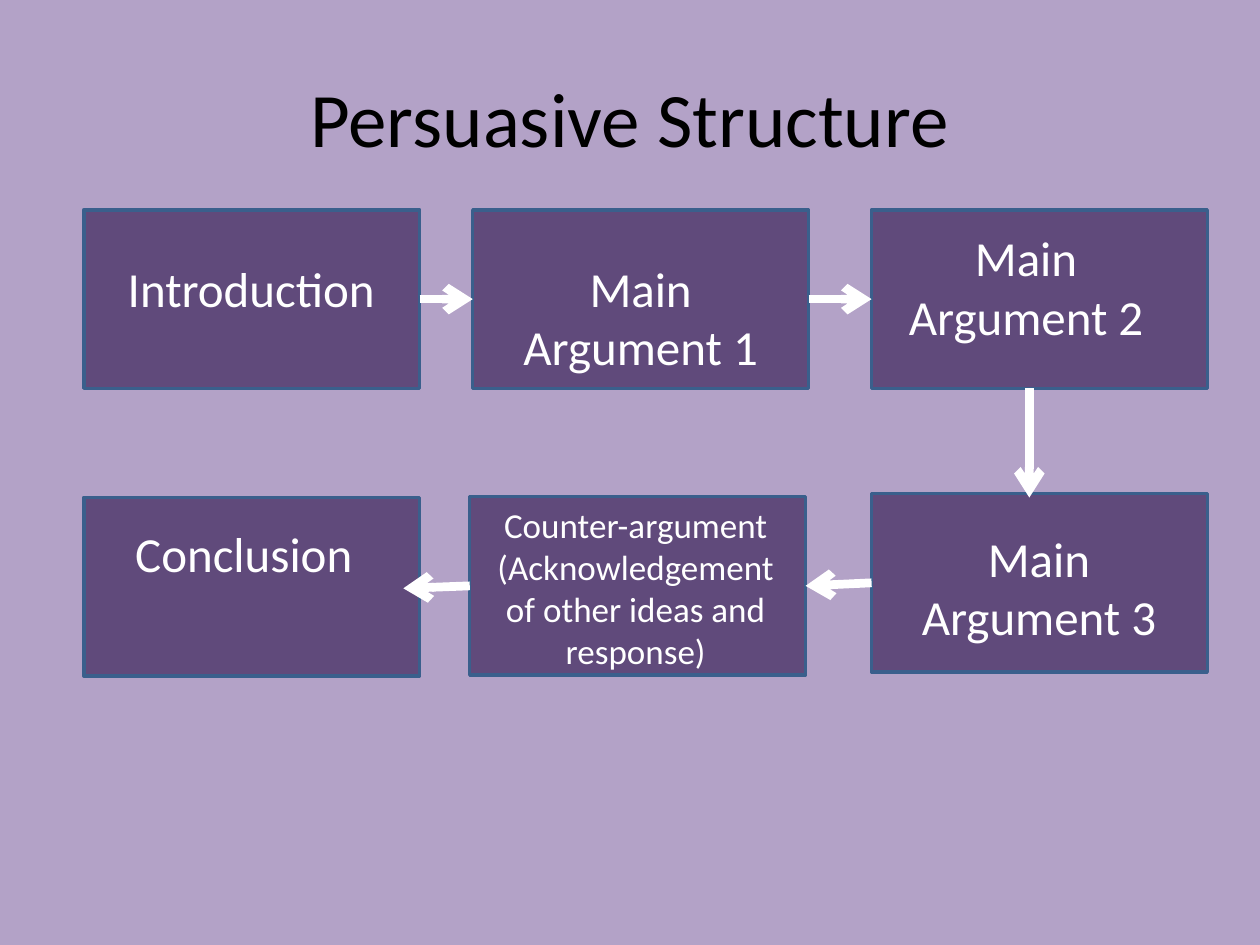
from lxml import etree
from pptx import Presentation
from pptx.dml.color import RGBColor
from pptx.enum.shapes import MSO_CONNECTOR, MSO_SHAPE
from pptx.enum.text import MSO_ANCHOR, MSO_AUTO_SIZE, PP_ALIGN
from pptx.oxml.ns import qn
from pptx.util import Cm, Pt

LAVENDER = RGBColor(0xB3, 0xA2, 0xC7)
PURPLE = RGBColor(0x60, 0x4A, 0x7B)
BLUE = RGBColor(0x3A, 0x5F, 0x8C)
WHITE = RGBColor(0xFF, 0xFF, 0xFF)
BLACK = RGBColor(0, 0, 0)

RECTANGLE = MSO_SHAPE.RECTANGLE
STRAIGHT = MSO_CONNECTOR.STRAIGHT
CENTER = PP_ALIGN.CENTER
MIDDLE = MSO_ANCHOR.MIDDLE
FIT_SHAPE = MSO_AUTO_SIZE.SHAPE_TO_FIT_TEXT
LEFT_SIDE, RIGHT_SIDE = 1, 3
TITLE_ONLY = 5

BOX_WIDTH, BOX_HEIGHT = 6.77, 3.6
LABEL_WIDTH = 6.23
TOP_ROW = 4.23

# Step name: box left, box top
BOXES = {
    "introduction": (1.69, TOP_ROW),
    "argument 1": (9.53, TOP_ROW),
    "argument 2": (17.57, TOP_ROW),
    "argument 3": (17.57, 9.95),
    "counter": (9.47, 10.01),
    "conclusion": (1.69, 10.03),
}

# Text, left, top, height, size
LABELS = [
    ("Introduction", 1.95, 5.08, 1.45, 28),
    ("Main Argument 1", 9.8, 5.08, 2.65, 28),
    ("Main Argument 2", 17.57, 4.47, 2.65, 28),
    ("Main Argument 3", 17.83, 10.52, 2.65, 28),
    ("Counter-argument (Acknowledgement of other ideas and response)",
     9.7, 10.03, 3.68, 20),
    ("Conclusion", 1.8, 10.42, 1.45, 28),
]


class SlideBuilder:
    """Holds the style and the current slide."""

    font_name = "Calibri"
    border_width = Pt(2)
    arrow_width = Pt(5)

    def __init__(self, slide):
        self.slide = slide

    def background(self, color):
        fill = self.slide.background.fill
        fill.solid()
        fill.fore_color.rgb = color

    def add_text(self, frame, text, size, color):
        paragraph = frame.paragraphs[0]
        paragraph.alignment = CENTER
        run = paragraph.add_run()
        run.text = text
        font_format = {"name": self.font_name, "size": Pt(size)}
        for attribute, value in font_format.items():
            setattr(run.font, attribute, value)
        run.font.color.rgb = color

    def title(self, text, left, top, width, height):
        shape = self.slide.shapes.title
        place = {"left": left, "top": top, "width": width, "height": height}
        for attribute, value in place.items():
            setattr(shape, attribute, Cm(value))
        shape.text_frame.vertical_anchor = MIDDLE
        self.add_text(shape.text_frame, text, 44, BLACK)

    def box(self, left, top):
        shape = self.slide.shapes.add_shape(
            RECTANGLE, Cm(left), Cm(top), Cm(BOX_WIDTH), Cm(BOX_HEIGHT))
        shape.shadow.inherit = False
        shape.fill.solid()
        shape.fill.fore_color.rgb = PURPLE
        shape.line.color.rgb = BLUE
        shape.line.width = self.border_width
        return shape

    def arrow(self, source=None, target=None, start=(0, 0), end=(0, 0)):
        """Join (box, side) pairs, or use points where no box is given."""
        connector = self.slide.shapes.add_connector(
            STRAIGHT, *(Cm(value) for value in (*start, *end)))
        if source:
            connector.begin_connect(*source)
        if target:
            connector.end_connect(*target)
        connector.line.color.rgb = WHITE
        connector.line.width = self.arrow_width
        properties = connector._element.spPr
        line = properties.find(qn("a:ln"))
        etree.SubElement(line, qn("a:tailEnd"), type="arrow")
        etree.SubElement(properties, qn("a:effectLst"))

    def label(self, text, left, top, height, size):
        shape = self.slide.shapes.add_textbox(
            Cm(left), Cm(top), Cm(LABEL_WIDTH), Cm(height))
        frame_format = {"word_wrap": True, "auto_size": FIT_SHAPE}
        for attribute, value in frame_format.items():
            setattr(shape.text_frame, attribute, value)
        self.add_text(shape.text_frame, text, size, WHITE)


def main():
    presentation = Presentation()
    presentation.slide_width, presentation.slide_height = Cm(25.4), Cm(19.05)
    layout = presentation.slide_layouts[TITLE_ONLY]
    builder = SlideBuilder(presentation.slides.add_slide(layout))

    # Background and title
    builder.background(LAVENDER)
    builder.title("Persuasive Structure", 1.27, 0.76, 22.86, 3.18)

    # Step boxes
    boxes = {name: builder.box(*place) for name, place in BOXES.items()}

    # Arrows: right along the top, down, then left along the bottom
    for source, target in (("introduction", "argument 1"),
                           ("argument 1", "argument 2")):
        builder.arrow((boxes[source], RIGHT_SIDE), (boxes[target], LEFT_SIDE))
    builder.arrow(start=(20.75, 7.83), end=(20.75, 10.03))
    builder.arrow((boxes["argument 3"], LEFT_SIDE),
                  (boxes["counter"], RIGHT_SIDE))
    builder.arrow((boxes["counter"], LEFT_SIDE), end=(8.13, 11.86))

    # Step labels
    for label in LABELS:
        builder.label(*label)

    presentation.save("out.pptx")


if __name__ == "__main__":
    main()
